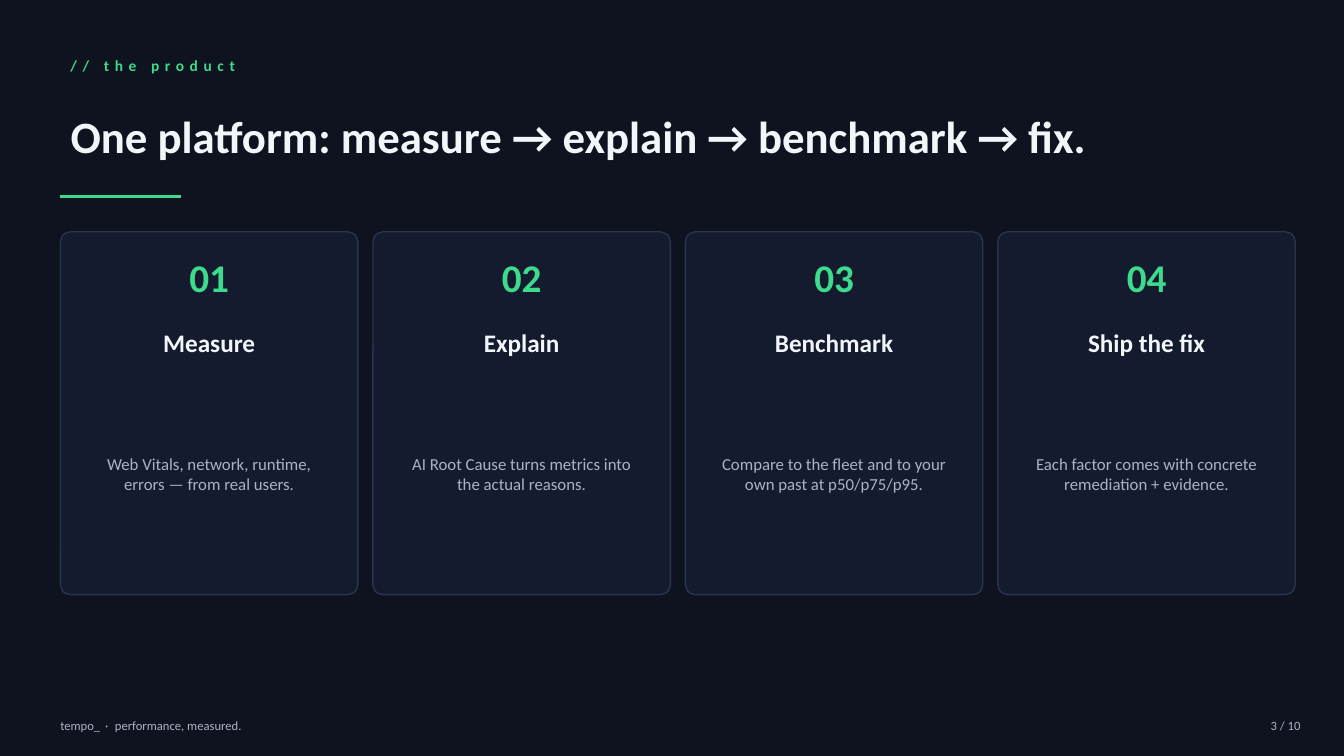
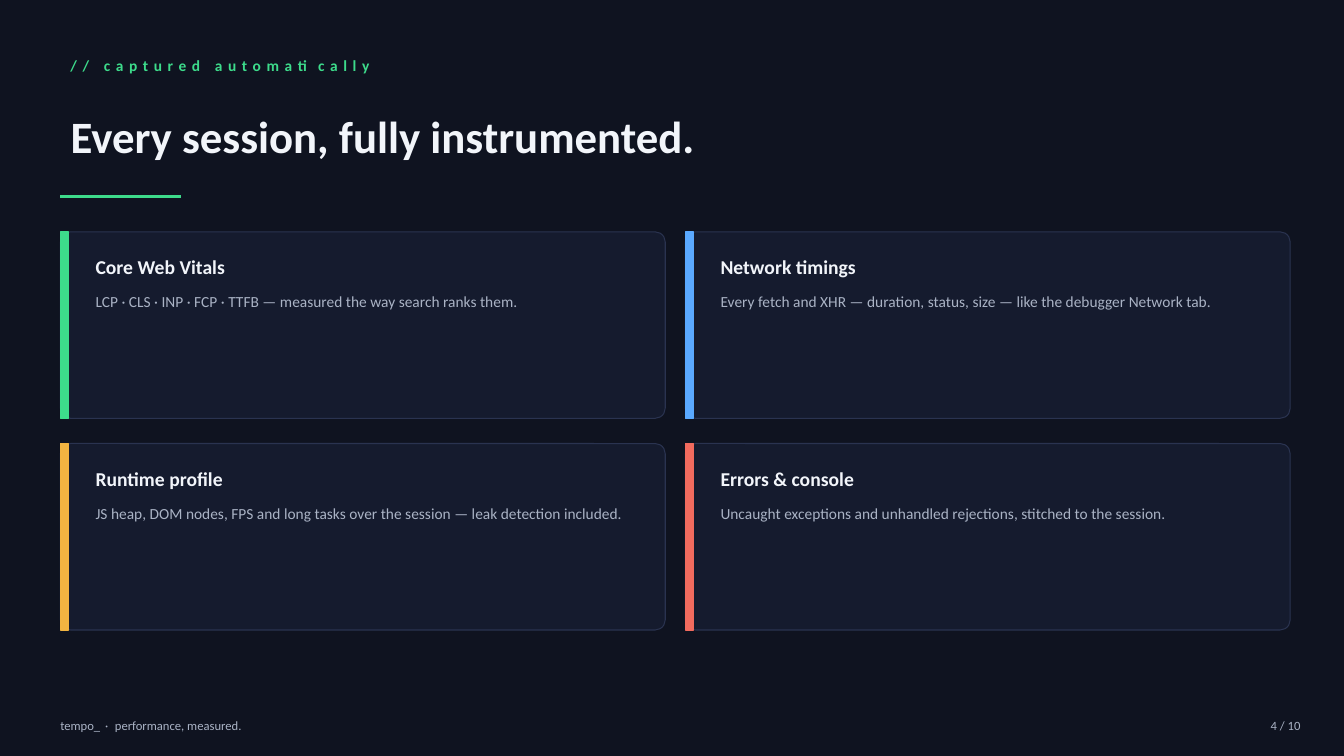
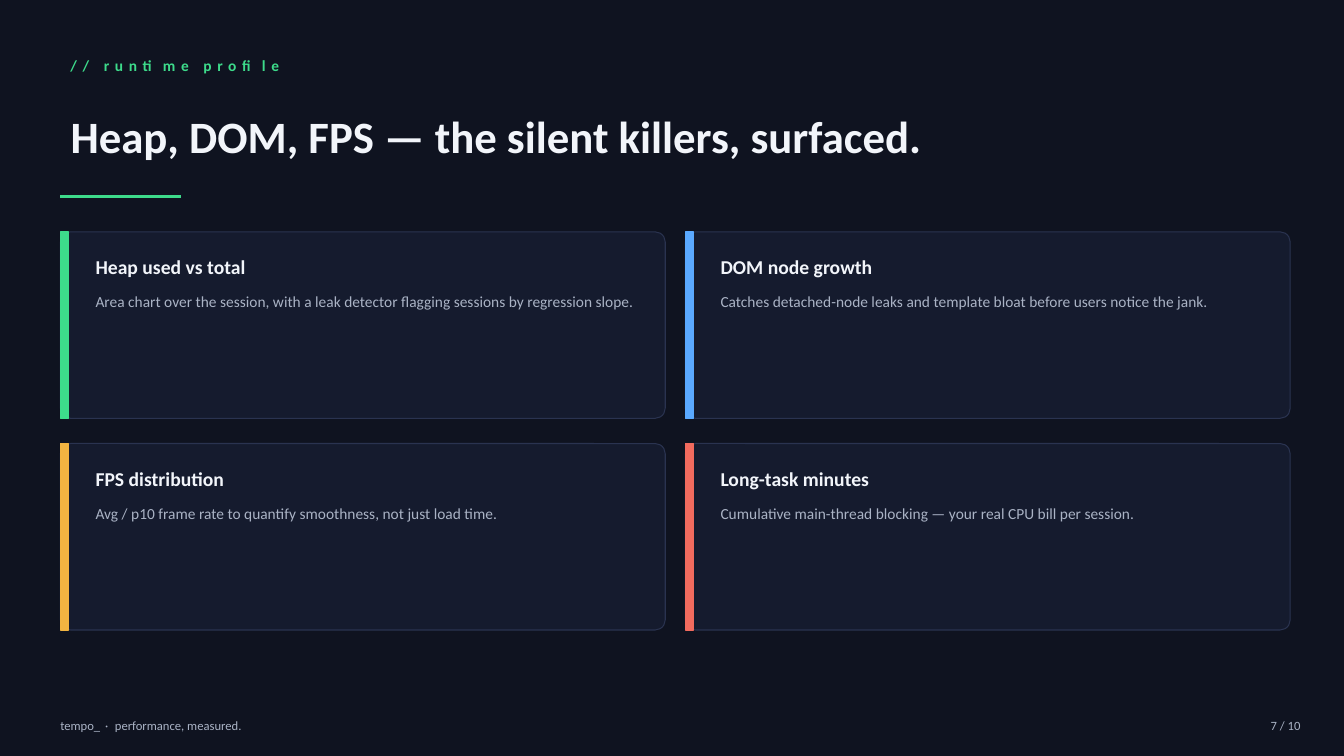
from dataclasses import dataclass

import lxml.etree
import pptx
import pptx.dml.color
import pptx.enum.shapes
import pptx.enum.text
import pptx.oxml.ns
import pptx.util

Pt = pptx.util.Pt
ALIGN = pptx.enum.text.PP_ALIGN
ANCHOR = pptx.enum.text.MSO_ANCHOR
SHAPE = pptx.enum.shapes.MSO_SHAPE

FONT = "Calibri"
BACKGROUND, PANEL, PANEL_BORDER = "0F1320", "151B2E", "2A3350"
WHITE, MUTED = "F2F5FA", "AAB3C5"
GREEN, BLUE, AMBER, RED = "3DDB8B", "5AA9FF", "F2B441", "F26B5E"

# Shared layout, in points
LEFT, CONTENT_TOP = 43.2, 165.6
CORNER = 7.2
PAGE_COUNT = 10


@dataclass(frozen=True)
class Box:
    left: float
    top: float
    width: float
    height: float

    def lengths(self) -> tuple:
        return Pt(self.left), Pt(self.top), Pt(self.width), Pt(self.height)


@dataclass(frozen=True)
class Style:
    size: float
    color: str
    bold: bool = False
    align: ALIGN = ALIGN.LEFT
    anchor: ANCHOR = ANCHOR.MIDDLE
    spacing: float = 0


@dataclass(frozen=True)
class Card:
    heading: str
    body: str


@dataclass(frozen=True)
class Page:
    number: int
    eyebrow: str
    title: str
    cards: tuple[Card, ...]


EYEBROW = Style(11, GREEN, bold=True, spacing=4)
TITLE = Style(32, WHITE, bold=True)
STEP_NUMBER = Style(28, GREEN, bold=True, align=ALIGN.CENTER)
STEP_HEADING = Style(18, WHITE, bold=True, align=ALIGN.CENTER)
STEP_BODY = Style(12, MUTED, align=ALIGN.CENTER)
PANEL_HEADING = Style(14, WHITE, bold=True)
PANEL_BODY = Style(11, MUTED, anchor=ANCHOR.TOP)
FOOTER = Style(9, MUTED)
FOOTER_DOT = Style(9, MUTED, spacing=1.4)
PAGE_NUMBER = Style(9, MUTED, align=ALIGN.RIGHT)

STEPS_PAGE = Page(
    3, "// the product", "One platform: measure → explain → benchmark → fix.", (
        Card("Measure", "Web Vitals, network, runtime, errors — from real users."),
        Card("Explain", "AI Root Cause turns metrics into the actual reasons."),
        Card("Benchmark", "Compare to the fleet and to your own past at p50/p75/p95."),
        Card("Ship the fix", "Each factor comes with concrete remediation + evidence."),
    ))
PANEL_PAGES = (
    Page(4, "// captured automatically", "Every session, fully instrumented.", (
        Card("Core Web Vitals",
             "LCP · CLS · INP · FCP · TTFB — measured the way search ranks them."),
        Card("Network timings",
             "Every fetch and XHR — duration, status, size — like the debugger Network tab."),
        Card("Runtime profile",
             "JS heap, DOM nodes, FPS and long tasks over the session — leak detection included."),
        Card("Errors & console",
             "Uncaught exceptions and unhandled rejections, stitched to the session."),
    )),
    Page(7, "// runtime profile", "Heap, DOM, FPS — the silent killers, surfaced.", (
        Card("Heap used vs total",
             "Area chart over the session, with a leak detector flagging sessions by regression slope."),
        Card("DOM node growth",
             "Catches detached-node leaks and template bloat before users notice the jank."),
        Card("FPS distribution",
             "Avg / p10 frame rate to quantify smoothness, not just load time."),
        Card("Long-task minutes",
             "Cumulative main-thread blocking — your real CPU bill per session."),
    )),
)


def rgb(color: str) -> pptx.dml.color.RGBColor:
    return pptx.dml.color.RGBColor.from_string(color)


def add_run(paragraph, text: str, style: Style) -> None:
    run = paragraph.add_run()
    run.text = text
    run.font.name = FONT
    run.font.size = Pt(style.size)
    run.font.bold = style.bold
    run.font.color.rgb = rgb(style.color)
    if style.spacing:
        run._r.get_or_add_rPr().set("spc", str(round(style.spacing * 100)))


def fill_frame(shape, text: str, style: Style):
    frame = shape.text_frame
    frame.word_wrap = True
    frame.auto_size = pptx.enum.text.MSO_AUTO_SIZE.NONE
    frame.vertical_anchor = style.anchor
    paragraph = frame.paragraphs[0]
    paragraph.alignment = style.align
    add_run(paragraph, text, style)
    return paragraph


def add_text(slide, box: Box, text: str, style: Style):
    return fill_frame(slide.shapes.add_textbox(*box.lengths()), text, style)


def add_block(slide, kind: SHAPE, box: Box, fill: str, line: str, line_width: float) -> None:
    shape = slide.shapes.add_shape(kind, *box.lengths())
    shape.shadow.inherit = False
    shape.fill.solid()
    shape.fill.fore_color.rgb = rgb(fill)
    shape.line.color.rgb = rgb(line)
    shape.line.width = Pt(line_width)
    if kind == SHAPE.ROUNDED_RECTANGLE:
        shape.adjustments[0] = CORNER / min(box.width, box.height)


def add_page(presentation, page: Page):
    """Add a slide with eyebrow, title, accent rule and footer."""
    slide = presentation.slides.add_slide(presentation.slide_layouts[5])
    add_text(slide, Box(LEFT, 36, 576, 21.6), page.eyebrow, EYEBROW)

    title = slide.shapes.title
    title.left, title.top, title.width, title.height = Box(LEFT, 61.2, 864, 72).lengths()
    fill_frame(title, page.title, TITLE)

    rule = slide.shapes.add_connector(
        pptx.enum.shapes.MSO_CONNECTOR.STRAIGHT,
        Pt(LEFT), Pt(140.4), Pt(LEFT + 86.4), Pt(140.4))
    rule.line.color.rgb = rgb(GREEN)
    rule.line.width = Pt(2)
    lxml.etree.SubElement(rule._element.spPr, pptx.oxml.ns.qn("a:effectLst"))

    footer = add_text(slide, Box(36, 507.6, 432, 21.6), "tempo_", FOOTER)
    add_run(footer, " · ", FOOTER_DOT)
    add_run(footer, "performance, measured.", FOOTER)
    add_text(slide, Box(864, 507.6, 72, 21.6), f"{page.number} / {PAGE_COUNT}", PAGE_NUMBER)
    return slide


def add_steps(slide, cards: tuple[Card, ...]) -> None:
    """Draw a row of numbered step cards."""
    width, gap, body_inset = 212.4, 10.8, 14.4
    for index, card in enumerate(cards):
        left = LEFT + index * (width + gap)
        add_block(slide, SHAPE.ROUNDED_RECTANGLE, Box(left, CONTENT_TOP, width, 259.2),
                  PANEL, PANEL_BORDER, 1)
        add_text(slide, Box(left, CONTENT_TOP + 10.8, width, 43.2),
                 f"{index + 1:02d}", STEP_NUMBER)
        add_text(slide, Box(left, CONTENT_TOP + 61.2, width, 36), card.heading, STEP_HEADING)
        add_text(slide, Box(left + body_inset, CONTENT_TOP + 100.8, width - 2 * body_inset, 144),
                 card.body, STEP_BODY)


def add_panels(slide, cards: tuple[Card, ...]) -> None:
    """Draw a two-column grid of panels with coloured edges."""
    width, height, column_gap, row_gap = 432, 133.2, 14.4, 18
    for index, (card, accent) in enumerate(zip(cards, (GREEN, BLUE, AMBER, RED))):
        row, column = divmod(index, 2)
        left = LEFT + column * (width + column_gap)
        top = CONTENT_TOP + row * (height + row_gap)
        add_block(slide, SHAPE.ROUNDED_RECTANGLE, Box(left, top, width, height),
                  PANEL, PANEL_BORDER, 0.75)
        add_block(slide, SHAPE.RECTANGLE, Box(left, top, 5.76, height), accent, accent, 1)
        add_text(slide, Box(left + 18, top + 10.8, 403.2, 28.8), card.heading, PANEL_HEADING)
        add_text(slide, Box(left + 18, top + 39.6, 403.2, 86.4), card.body, PANEL_BODY)


def main() -> None:
    presentation = pptx.Presentation()
    presentation.slide_width, presentation.slide_height = Pt(960), Pt(540)
    background = presentation.slide_master.background.fill
    background.solid()
    background.fore_color.rgb = rgb(BACKGROUND)

    add_steps(add_page(presentation, STEPS_PAGE), STEPS_PAGE.cards)
    for page in PANEL_PAGES:
        add_panels(add_page(presentation, page), page.cards)
    presentation.save("out.pptx")


if __name__ == "__main__":
    main()
